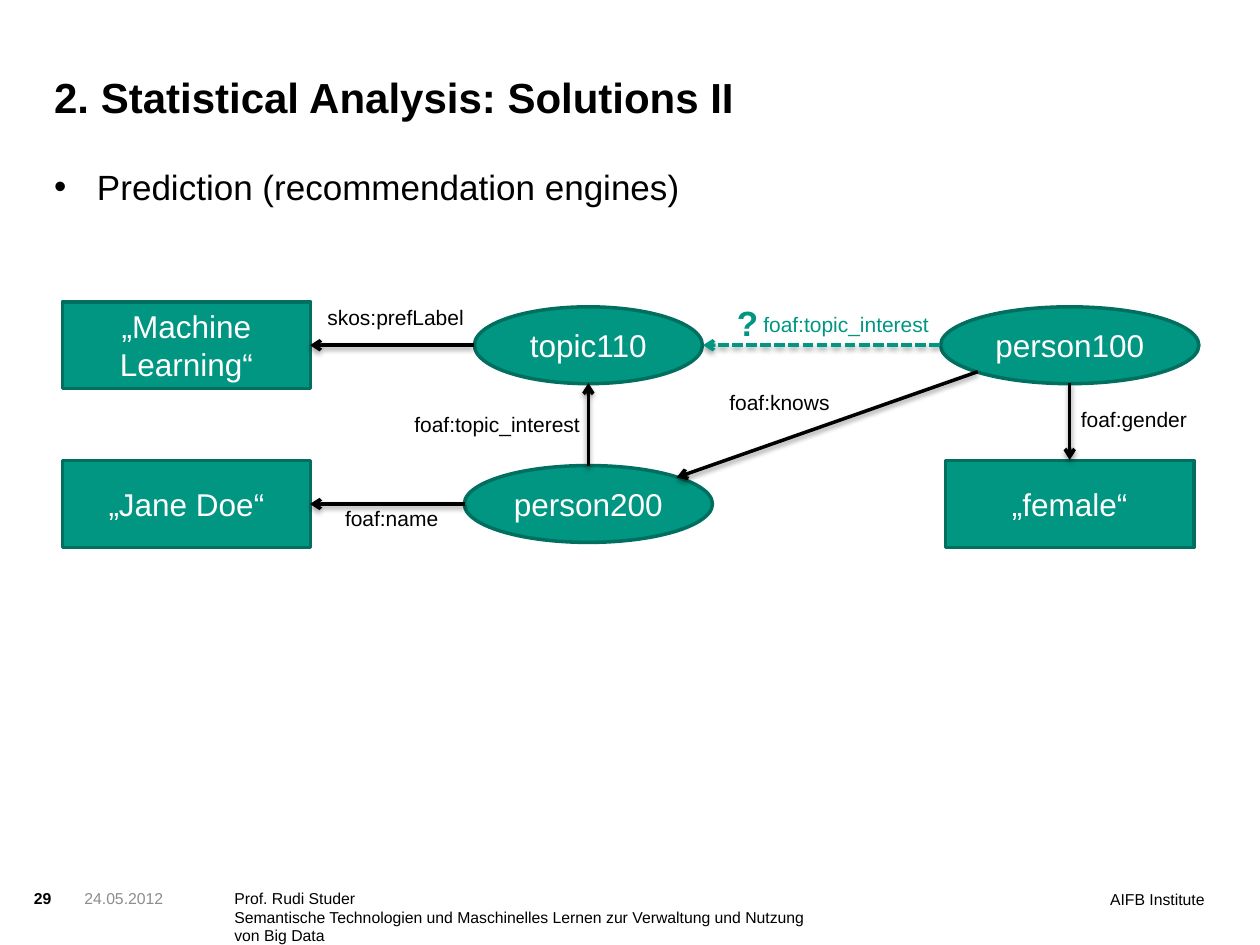
"""Build the slide on predicting links in a small semantic graph."""
from typing import NamedTuple

from lxml import etree
from pptx import Presentation
from pptx.dml.color import RGBColor
from pptx.enum.dml import MSO_LINE
from pptx.enum.shapes import MSO_CONNECTOR, MSO_SHAPE
from pptx.enum.text import MSO_ANCHOR, MSO_AUTO_SIZE, PP_ALIGN
from pptx.oxml.ns import qn
from pptx.util import Inches, Pt

BLACK = RGBColor(0x00, 0x00, 0x00)
WHITE = RGBColor(0xFF, 0xFF, 0xFF)
GREY = RGBColor(0x8C, 0x8C, 0x8C)
GREEN = RGBColor(0x00, 0x96, 0x82)
DARK_GREEN = RGBColor(0x00, 0x6F, 0x60)
FONT = "Arial"
RECT, OVAL = MSO_SHAPE.RECTANGLE, MSO_SHAPE.OVAL
LEFT, CENTER, RIGHT = PP_ALIGN.LEFT, PP_ALIGN.CENTER, PP_ALIGN.RIGHT
TOP, MIDDLE, BOTTOM = MSO_ANCHOR.TOP, MSO_ANCHOR.MIDDLE, MSO_ANCHOR.BOTTOM
STRAIGHT = MSO_CONNECTOR.STRAIGHT
SYS_DASH = MSO_LINE.SQUARE_DOT
BOX_W, BOX_H, OVAL_H = 1.97, 0.69, 0.61
ROW_1, ROW_2 = 2.74, 4.0
COL_1, COL_2, COL_3 = 1.48, 4.67, 8.49


class Node(NamedTuple):
    text: str
    kind: MSO_SHAPE
    x: float
    y: float
    w: float
    h: float


class Edge(NamedTuple):
    start: tuple[float, float]
    end: tuple[float, float]
    color: RGBColor = BLACK
    dashed: bool = False


class Label(NamedTuple):
    lines: tuple[str, ...]
    box: tuple[float, float, float, float]
    size: float = 12
    color: RGBColor = BLACK
    bold: bool = False
    align: PP_ALIGN = LEFT
    inset: bool = True
    wrap: bool = True


NODES = [
    Node("„Machine Learning“", RECT, COL_1, ROW_1, BOX_W, BOX_H),
    Node("topic110", OVAL, COL_2, ROW_1, 1.81, OVAL_H),
    Node("person100", OVAL, COL_3, ROW_1, 2.05, OVAL_H),
    Node("„Jane Doe“", RECT, COL_1, ROW_2, BOX_W, BOX_H),
    Node("person200", OVAL, COL_2, ROW_2, BOX_W, OVAL_H),
    Node("„female“", RECT, COL_3, ROW_2, BOX_W, BOX_H),
]
EDGES = [
    Edge((3.76, ROW_1), (2.46, ROW_1)),
    Edge((3.69, ROW_2), (2.46, ROW_2)),
    Edge((COL_2, 3.7), (COL_2, 3.04)),
    Edge((COL_3, 3.04), (COL_3, 3.65)),
    Edge((7.76, 2.95), (5.37, 3.79)),
    Edge((7.46, ROW_1), (5.58, ROW_1), GREEN, True),
]
LABELS = [
    Label(("skos:prefLabel",), (2.5, 2.37, 2.28, 0.33)),
    Label(("foaf:knows",), (5.69, 3.04, 2.28, 0.33)),
    Label(("foaf:name",), (2.64, 3.96, 1.57, 0.33)),
    Label(("foaf:gender",), (8.48, 3.18, 1.57, 0.3)),
    Label(("foaf:topic_interest",), (3.19, 3.22, 2.28, 0.3)),
    Label(("foaf:topic_interest",), (5.96, 2.42, 1.57, 0.3), color=GREEN),
    Label(("?",), (5.75, 2.34, 0.37, 0.44), 20, GREEN, True, wrap=False),
    Label(("29",), (0.27, 7.05, 0.36, 0.24), 9, bold=True, inset=False),
    Label(("24.05.2012",), (0.67, 7.05, 1.14, 0.39), 9, GREY, inset=False),
    Label(("Prof. Rudi Studer",
           "Semantische Technologien und Maschinelles Lernen zur Verwaltung "
           "und Nutzung von Big Data"),
          (1.86, 7.05, 4.65, 0.39), 9, inset=False),
    Label(("AIFB Institute",), (6.57, 7.06, 2.99, 0.39), 9, align=RIGHT, inset=False),
]
BULLET = Label(("Prediction (recommendation engines)",), (0.43, 1.31, 9.14, 5.35),
               20, inset=False)


def add_run(p, text: str, size: float, color: RGBColor, bold: bool = False) -> None:
    """Append one formatted run to a paragraph."""
    r = p.add_run()
    r.text = text
    r.font.name = FONT
    r.font.size = Pt(size)
    r.font.bold = bold
    r.font.color.rgb = color


def clear_insets(tf) -> None:
    """Remove the inner margins of a text frame."""
    tf.margin_left = tf.margin_right = tf.margin_top = tf.margin_bottom = 0


def add_title(slide, text: str) -> None:
    """Place and fill the title placeholder."""
    sp = slide.shapes.title
    sp.left, sp.top, sp.width, sp.height = map(Inches, (0.43, 0.36, 7.56, 0.61))
    tf = sp.text_frame
    tf.auto_size = MSO_AUTO_SIZE.NONE
    tf.vertical_anchor = BOTTOM
    clear_insets(tf)
    p = tf.paragraphs[0]
    p.alignment = LEFT
    add_run(p, text, 24, BLACK, True)


def add_label(slide, label: Label):
    """Add a text box and return its text frame."""
    tf = slide.shapes.add_textbox(*map(Inches, label.box)).text_frame
    tf.word_wrap = label.wrap
    tf.vertical_anchor = TOP
    if not label.inset:
        clear_insets(tf)
    for i, line in enumerate(label.lines):
        p = tf.add_paragraph() if i else tf.paragraphs[0]
        p.alignment = label.align
        add_run(p, line, label.size, label.color, label.bold)
    return tf


def add_bullet(slide, label: Label) -> None:
    """Add a text box whose paragraph has a hanging bullet."""
    p = add_label(slide, label).paragraphs[0]
    pPr = p._p.get_or_add_pPr()
    pPr.set("marL", str(Inches(0.34)))
    pPr.set("indent", str(-Inches(0.34)))
    etree.SubElement(pPr, qn("a:buFont"), typeface=FONT)
    etree.SubElement(pPr, qn("a:buChar"), char="•")


def add_node(slide, node: Node) -> None:
    """Draw a graph node around its centre."""
    box = (node.x - node.w / 2, node.y - node.h / 2, node.w, node.h)
    sp = slide.shapes.add_shape(node.kind, *map(Inches, box))
    sp.shadow.inherit = False
    sp.fill.solid()
    sp.fill.fore_color.rgb = GREEN
    sp.line.color.rgb = DARK_GREEN
    sp.line.width = Pt(2)
    tf = sp.text_frame
    tf.word_wrap = True
    tf.vertical_anchor = MIDDLE
    p = tf.paragraphs[0]
    p.alignment = CENTER
    add_run(p, node.text, 18, WHITE)


def add_edge(slide, edge: Edge) -> None:
    """Draw an arrow with a soft shadow."""
    sp = slide.shapes.add_connector(STRAIGHT, *map(Inches, edge.start + edge.end))
    sp.line.color.rgb = edge.color
    sp.line.width = Pt(2)
    if edge.dashed:
        sp.line.dash_style = SYS_DASH
    etree.SubElement(sp.line._get_or_add_ln(), qn("a:tailEnd"), type="arrow")
    effects = etree.SubElement(sp._element.spPr, qn("a:effectLst"))
    shadow = etree.SubElement(effects, qn("a:outerShdw"), blurRad=str(Pt(3.1)),
                              dist=str(Pt(1.6)), dir="5400000", rotWithShape="0")
    color = etree.SubElement(shadow, qn("a:srgbClr"), val=str(BLACK))
    etree.SubElement(color, qn("a:alpha"), val="38000")


def main() -> None:
    """Build and save the presentation."""
    prs = Presentation()
    prs.slide_width, prs.slide_height = Inches(10), Inches(7.5)
    slide = prs.slides.add_slide(prs.slide_layouts[5])
    add_title(slide, "2. Statistical Analysis: Solutions II")
    add_bullet(slide, BULLET)
    for node in NODES:
        add_node(slide, node)
    for edge in EDGES:
        add_edge(slide, edge)
    for label in LABELS:
        add_label(slide, label)
    prs.save("out.pptx")


if __name__ == "__main__":
    main()
